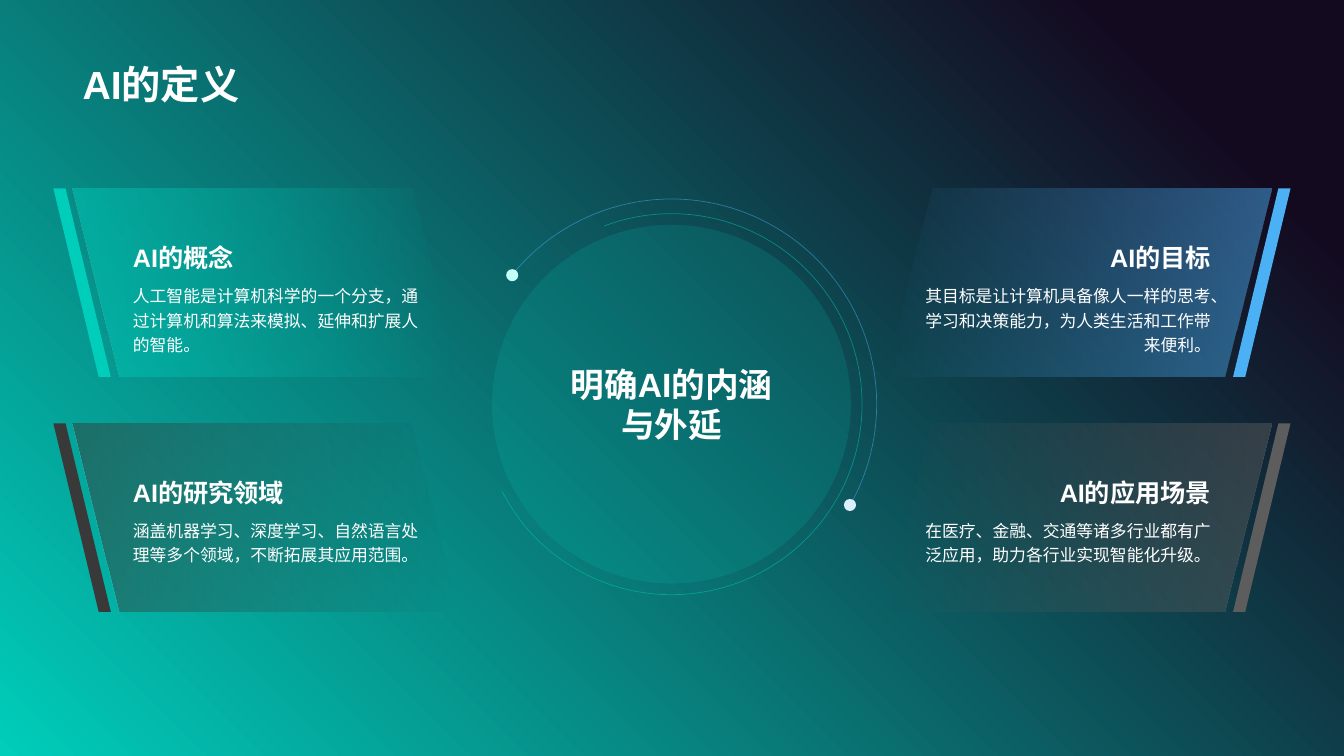
from lxml import etree
from pptx import Presentation
from pptx import util as u
from pptx.dml.color import RGBColor
from pptx.enum import shapes, text
from pptx.oxml.ns import qn

TITLE = "AI的定义"
CORE = "明确AI的内涵与外延"
CARDS = [
    [("AI的概念", "人工智能是计算机科学的一个分支，通过计算机和算法来模拟、延伸和扩展人的智能。", "teal"),
     ("AI的目标", "其目标是让计算机具备像人一样的思考、学习和决策能力，为人类生活和工作带来便利。", "blue")],
    [("AI的研究领域", "涵盖机器学习、深度学习、自然语言处理等多个领域，不断拓展其应用范围。", "dark"),
     ("AI的应用场景", "在医疗、金融、交通等诸多行业都有广泛应用，助力各行业实现智能化升级。", "grey")],
]
ORBITS = [(1.89, 249.27, 152.86, "teal"), (2.035, 218.24, 29, "blue")]
DOTS = [(5.02, 2.67, "mint"), (8.37, 4.95, "ice")]

THEME = {
    "font": "Arial",
    "colors": {"teal": "00CDBA", "night": "140A20", "blue": "4BB0F4", "dark": "393939",
               "grey": "5D5D5D", "mint": "C2FFF9", "ice": "DBEFFD", "white": "FFFFFF"},
    "sizes": {"title": 28, "core": 24, "heading": 18, "detail": 12},
}
SLIDE_W, SLIDE_H = 13.33, 7.5
CENTER_X, CENTER_Y, CORE_RADIUS = 6.66, 4.01, 1.78
CARD_TOP, ROW_STEP, CARD_H = 1.87, 2.33, 1.87
PANEL_X, PANEL_W = 0.72, 3.83
STRIP_X, STRIP_W, STRIP_SLANT = 0.53, 0.57, 0.788
TEXT_X, TEXT_W = 1.22, 3.13
HEADING_DY, HEADING_H, DETAIL_H = 0.16, 0.72, 0.86
ALIGN, ANCHOR = text.PP_ALIGN, text.MSO_ANCHOR


def rgb(name):
    return RGBColor.from_string(THEME["colors"][name])


def set_alpha(parent, percent):
    for color in parent.iter(qn("a:srgbClr")):
        etree.SubElement(color, qn("a:alpha"), val=str(percent * 1000))


def gradient(fill, stops, angle):
    fill.gradient()
    fill.gradient_angle = angle
    for stop, (position, name) in zip(fill.gradient_stops, stops):
        stop.position = position
        stop.color.rgb = rgb(name)


def add_preset(slide, preset, box, color=None, adjust=()):
    part = slide.shapes.add_shape(preset, *map(u.Inches, box))
    part.shadow.inherit = False
    part.line.fill.background()
    if color:
        part.fill.solid()
        part.fill.fore_color.rgb = rgb(color)
    else:
        part.fill.background()
    for index, value in enumerate(adjust):
        part.adjustments[index] = value
    return part


def write(part, words, role, align, anchor, bold=True, spacing=None):
    frame = part.text_frame
    for name, value in {"word_wrap": True, "vertical_anchor": anchor,
                        "auto_size": text.MSO_AUTO_SIZE.NONE}.items():
        setattr(frame, name, value)
    paragraph = frame.paragraphs[0]
    paragraph.alignment, paragraph.line_spacing = align, spacing
    run = paragraph.add_run()
    run.text = words
    for name, value in {"name": THEME["font"], "size": u.Pt(THEME["sizes"][role]),
                        "bold": bold}.items():
        setattr(run.font, name, value)
    run.font.color.rgb = rgb("white")
    etree.SubElement(run._r.get_or_add_rPr(), qn("a:ea"), typeface=THEME["font"])


def circle_box(radius):
    return CENTER_X - radius, CENTER_Y - radius, 2 * radius, 2 * radius


def add_core(slide):
    core = add_preset(slide, shapes.MSO_SHAPE.OVAL, circle_box(CORE_RADIUS), "teal")
    set_alpha(core._element.spPr, 15)
    write(core, CORE, "core", ALIGN.CENTER, ANCHOR.MIDDLE)
    for radius, start, end, color in ORBITS:
        orbit = add_preset(slide, shapes.MSO_SHAPE.ARC, circle_box(radius),
                           adjust=(start * 0.6, end * 0.6))
        orbit.line.color.rgb = rgb(color)
        orbit.line.width = u.Pt(0.5)
        set_alpha(orbit._element.spPr, 50)
    for x, y, color in DOTS:
        add_preset(slide, shapes.MSO_SHAPE.OVAL, (x, y, 0.12, 0.12), color)


def add_card(slide, row, on_right, heading, detail, color):
    top = CARD_TOP + row * ROW_STEP

    def place(x, width):
        return SLIDE_W - x - width if on_right else x

    def slanted(x, width, **style):
        part = add_preset(slide, shapes.MSO_SHAPE.PARALLELOGRAM,
                          (place(x, width), top, width, CARD_H), **style)
        if not on_right:
            part._element.spPr.find(qn("a:xfrm")).set("flipH", "1")
        return part

    panel = slanted(PANEL_X, PANEL_W)
    gradient(panel.fill, [(0, color), (1, color)], 0)
    for stop, percent in zip(panel._element.spPr.iter(qn("a:gs")), (0, 50)):
        set_alpha(stop, percent)

    align = ALIGN.RIGHT if on_right else ALIGN.LEFT
    heading_top = top + HEADING_DY
    for words, role, y, height, anchor, bold, spacing in [
            (heading, "heading", heading_top, HEADING_H, ANCHOR.BOTTOM, True, None),
            (detail, "detail", heading_top + HEADING_H, DETAIL_H, ANCHOR.TOP, False, 1.2)]:
        label = slide.shapes.add_textbox(
            *map(u.Inches, (place(TEXT_X, TEXT_W), y, TEXT_W, height)))
        write(label, words, role, align, anchor, bold, spacing)
    slanted(STRIP_X, STRIP_W, color=color, adjust=(STRIP_SLANT,))


def main():
    """Build the slide that defines AI and save it."""
    deck = Presentation()
    deck.slide_width, deck.slide_height = u.Inches(SLIDE_W), u.Inches(SLIDE_H)
    slide = deck.slides.add_slide(deck.slide_layouts[5])
    gradient(slide.background.fill, [(0, "teal"), (0.88, "night")], 45)
    title = slide.shapes.title
    for side, inches in {"left": 0.72, "top": 0.14, "width": 11.88, "height": 0.98}.items():
        setattr(title, side, u.Inches(inches))
    write(title, TITLE, "title", ALIGN.LEFT, ANCHOR.BOTTOM)
    add_core(slide)
    for row, pair in enumerate(CARDS):
        for on_right, card in enumerate(pair):
            add_card(slide, row, on_right, *card)
    deck.save("out.pptx")


if __name__ == "__main__":
    main()
